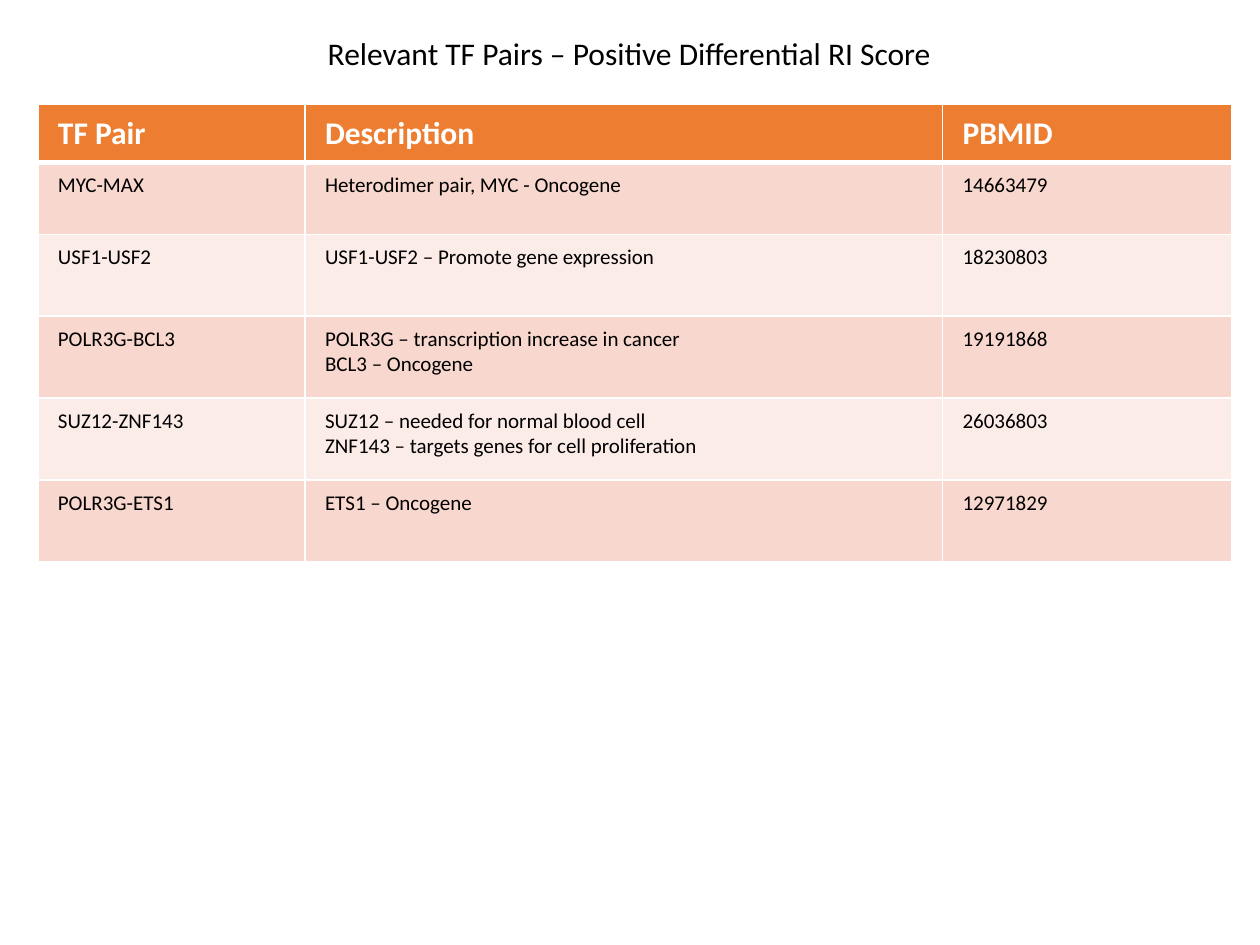
"""Build the slide listing transcription factor pairs with a positive differential RI score."""

from dataclasses import dataclass
from typing import Any

from lxml.etree import SubElement
from pptx import Presentation
from pptx.dml.color import RGBColor
from pptx.enum.text import MSO_ANCHOR, MSO_AUTO_SIZE, PP_ALIGN
from pptx.oxml.ns import qn
from pptx.util import Inches, Pt


@dataclass(frozen=True)
class Theme:
    font: str = "Calibri"
    ink: str = "000000"
    paper: str = "FFFFFF"
    header_fill: str = "ED7D31"
    bands: tuple[str, str] = ("F8D7CE", "FCECE8")
    large: int = 18
    small: int = 12
    rule: int = 1
    header_rule: int = 3


@dataclass(frozen=True)
class TFPair:
    name: str
    description: str
    pbmid: str


THEME = Theme()
HEADINGS = TFPair("TF Pair", "Description", "PBMID")
PAIRS = (
    TFPair("MYC-MAX", "Heterodimer pair, MYC - Oncogene", "14663479"),
    TFPair("USF1-USF2", "USF1-USF2 – Promote gene expression", "18230803"),
    TFPair("POLR3G-BCL3", "POLR3G – transcription increase in cancer\vBCL3 – Oncogene", "19191868"),
    TFPair(
        "SUZ12-ZNF143",
        "SUZ12 – needed for normal blood cell\nZNF143 – targets genes for cell proliferation",
        "26036803",
    ),
    TFPair("POLR3G-ETS1", "ETS1 – Oncogene", "12971829"),
)
COLUMN_WIDTHS = (2.12, 5.06, 2.3)
ROW_HEIGHTS = (0.45, 0.57) + (0.65,) * 4
CELL_FORMAT = {
    "margin_left": Inches(0.16),
    "margin_right": Inches(0.16),
    "margin_top": Inches(0.08),
    "margin_bottom": Inches(0.08),
    "vertical_anchor": MSO_ANCHOR.TOP,
}
TITLE_PLACE = {
    "left": Inches(2.47),
    "top": Inches(0.22),
    "width": Inches(5.05),
    "height": Inches(0.4),
}
TITLE_FRAME = {
    "word_wrap": False,
    "auto_size": MSO_AUTO_SIZE.SHAPE_TO_FIT_TEXT,
    "vertical_anchor": MSO_ANCHOR.TOP,
}


def apply_format(target: Any, values: dict[str, Any]) -> None:
    """Set every named attribute on the target."""
    for name, value in values.items():
        setattr(target, name, value)


def style_text(frame: Any, size: int, color: str, bold: bool, align: PP_ALIGN) -> None:
    """Give all paragraphs of a text frame one style."""
    for paragraph in frame.paragraphs:
        paragraph.alignment = align
        apply_format(paragraph.font, {"name": THEME.font, "size": Pt(size), "bold": bold})
        paragraph.font.color.rgb = RGBColor.from_string(color)


def add_borders(cell: Any, top: int, bottom: int) -> None:
    """Outline a cell in the paper colour."""
    properties = cell._tc.get_or_add_tcPr()
    widths = {"lnL": THEME.rule, "lnR": THEME.rule, "lnT": top, "lnB": bottom}
    for side, width in widths.items():
        line = SubElement(properties, qn(f"a:{side}"), w=str(Pt(width)))
        SubElement(SubElement(line, qn("a:solidFill")), qn("a:srgbClr"), val=THEME.paper)


def fill_row(table: Any, index: int, pair: TFPair) -> None:
    """Write and style one table row."""
    header = index == 0
    fill = THEME.header_fill if header else THEME.bands[(index - 1) % 2]
    size, color = (THEME.large, THEME.paper) if header else (THEME.small, THEME.ink)
    top = THEME.header_rule if index == 1 else THEME.rule
    bottom = THEME.header_rule if header else THEME.rule
    for cell, text in zip(table.rows[index].cells, (pair.name, pair.description, pair.pbmid)):
        cell.text = text
        apply_format(cell, CELL_FORMAT)
        style_text(cell.text_frame, size, color, header, PP_ALIGN.LEFT)
        add_borders(cell, top, bottom)
        cell.fill.solid()
        cell.fill.fore_color.rgb = RGBColor.from_string(fill)


def add_pair_table(slide: Any) -> None:
    """Add the table of transcription factor pairs."""
    table = slide.shapes.add_table(
        len(ROW_HEIGHTS), len(COLUMN_WIDTHS),
        Inches(0.3), Inches(0.83), Inches(sum(COLUMN_WIDTHS)), Inches(sum(ROW_HEIGHTS)),
    ).table
    for column, width in zip(table.columns, COLUMN_WIDTHS):
        column.width = Inches(width)
    for row, height in zip(table.rows, ROW_HEIGHTS):
        row.height = Inches(height)
    for index, pair in enumerate((HEADINGS, *PAIRS)):
        fill_row(table, index, pair)


def add_title(slide: Any) -> None:
    """Place and style the slide title."""
    title = slide.shapes.title
    apply_format(title, TITLE_PLACE)
    title.text_frame.text = "Relevant TF Pairs – Positive Differential RI Score"
    apply_format(title.text_frame, TITLE_FRAME)
    style_text(title.text_frame, THEME.large, THEME.ink, False, PP_ALIGN.CENTER)


def main() -> None:
    """Build and save the presentation."""
    presentation = Presentation()
    apply_format(presentation, {"slide_width": Inches(10), "slide_height": Inches(7.5)})
    slide = presentation.slides.add_slide(presentation.slide_layouts[5])
    add_title(slide)
    add_pair_table(slide)
    presentation.save("out.pptx")


if __name__ == "__main__":
    main()
